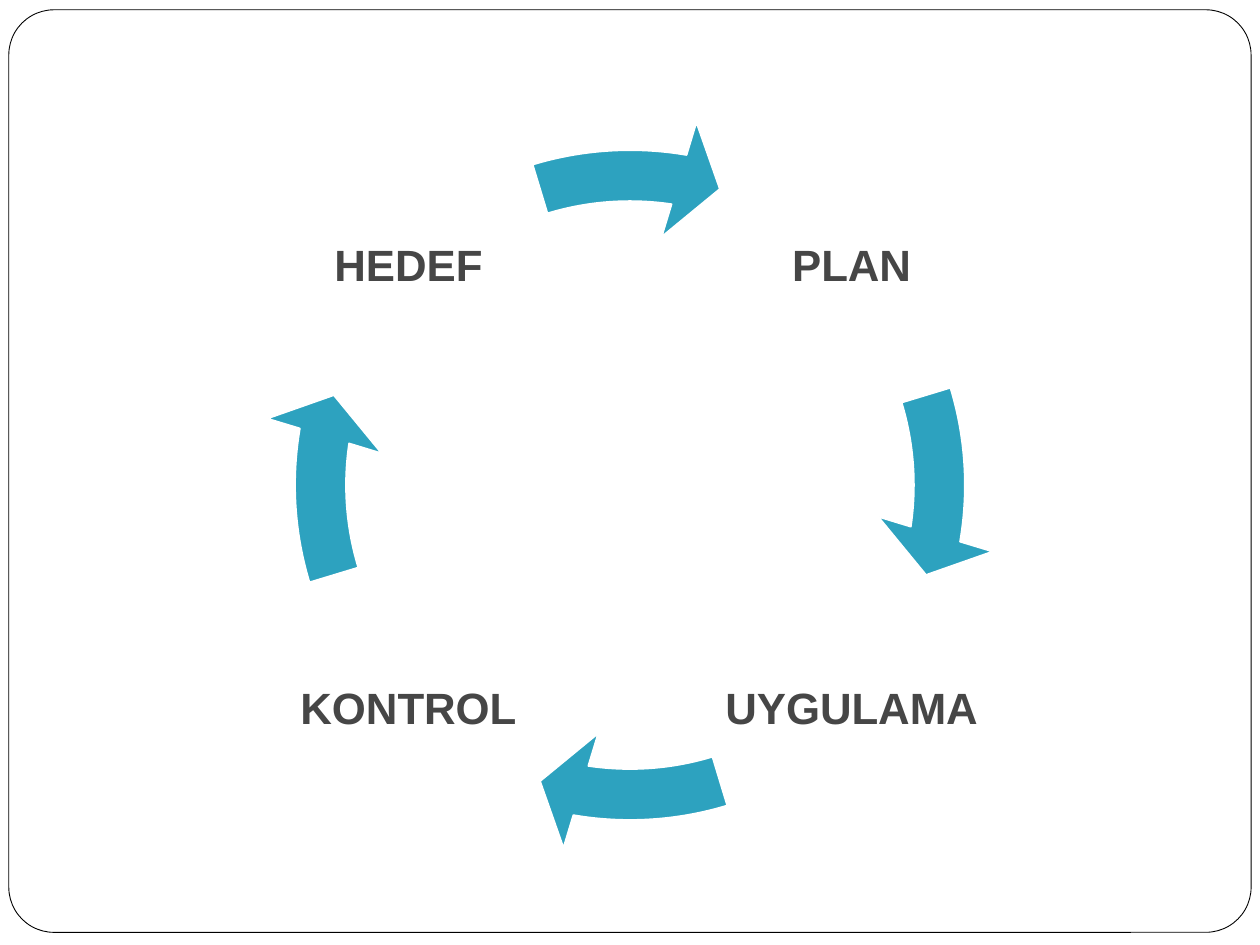
from pptx import Presentation
from pptx.dml.color import RGBColor
from pptx.enum.shapes import MSO_SHAPE
from pptx.enum.text import MSO_ANCHOR, PP_ALIGN
from pptx.util import Pt

WHITE = RGBColor(0xFF, 0xFF, 0xFF)
BLACK = RGBColor(0x00, 0x00, 0x00)
TEAL = RGBColor(0x2D, 0xA2, 0xBF)
GREY = RGBColor(0x46, 0x46, 0x46)

# Each step with the side of the centre it stands on, clockwise
STEPS = [
    ("PLAN", 1, -1),
    ("UYGULAMA", 1, 1),
    ("KONTROL", -1, 1),
    ("HEDEF", -1, -1),
]
LABEL_SIZE = 149.76
ADJUST_PER_DEGREE = 0.6  # 60000 angle units per degree, 100000 per 1.0


def add_filled_shape(page, kind, box, fill, line, line_width):
    shape = page.shapes.add_shape(kind, *map(Pt, box))
    shape.shadow.inherit = False
    shape.fill.solid()
    shape.fill.fore_color.rgb = fill
    shape.line.color.rgb = line
    shape.line.width = Pt(line_width)
    return shape


def add_frame(page, box):
    frame = add_filled_shape(page, MSO_SHAPE.ROUNDED_RECTANGLE, box, WHITE, BLACK, 0.5)
    frame.adjustments[0] = 0.049


def add_label(page, words, box):
    label = page.shapes.add_textbox(*map(Pt, box))
    text = label.text_frame
    text.word_wrap = True
    text.vertical_anchor = MSO_ANCHOR.MIDDLE
    text.margin_left = text.margin_right = Pt(2.5)
    text.margin_top = text.margin_bottom = Pt(2.5)
    para = text.paragraphs[0]
    para.alignment = PP_ALIGN.CENTER
    span = para.add_run()
    span.text = words
    span.font.name = "Arial"
    span.font.size = Pt(25)
    span.font.bold = True
    span.font.color.rgb = GREY


def add_arc_arrow(page, box, turn):
    """Draw the arrow on the right of the ring, turned clockwise by degrees."""
    arrow = add_filled_shape(page, MSO_SHAPE.CIRCULAR_ARROW, box, TEAL, WHITE, 1)
    head, end, start = 7.76, 9.13 + turn, (343.11 + turn) % 360
    arrow.adjustments[0] = 0.069
    for index, angle in enumerate((head, end, start), 1):
        arrow.adjustments[index] = angle * ADJUST_PER_DEGREE
    arrow.adjustments[4] = 0.081


def add_cycle(page, box):
    left, top, width, height = box
    center_x, center_y = left + width / 2, top + height / 2
    offset = width * 0.3
    for index, (words, side_x, side_y) in enumerate(STEPS):
        label_left = center_x + side_x * offset - LABEL_SIZE / 2
        label_top = center_y + side_y * offset - LABEL_SIZE / 2
        add_label(page, words, (label_left, label_top, LABEL_SIZE, LABEL_SIZE))
        add_arc_arrow(page, box, index * 360 / len(STEPS))


def main():
    deck = Presentation()
    deck.slide_width, deck.slide_height = Pt(720), Pt(540)
    page = deck.slides.add_slide(deck.slide_layouts[6])
    add_frame(page, (5.04, 5.6, 709.92, 527.2))
    add_cycle(page, (149, 66.2, 422, 422))
    deck.save("out.pptx")


if __name__ == "__main__":
    main()
